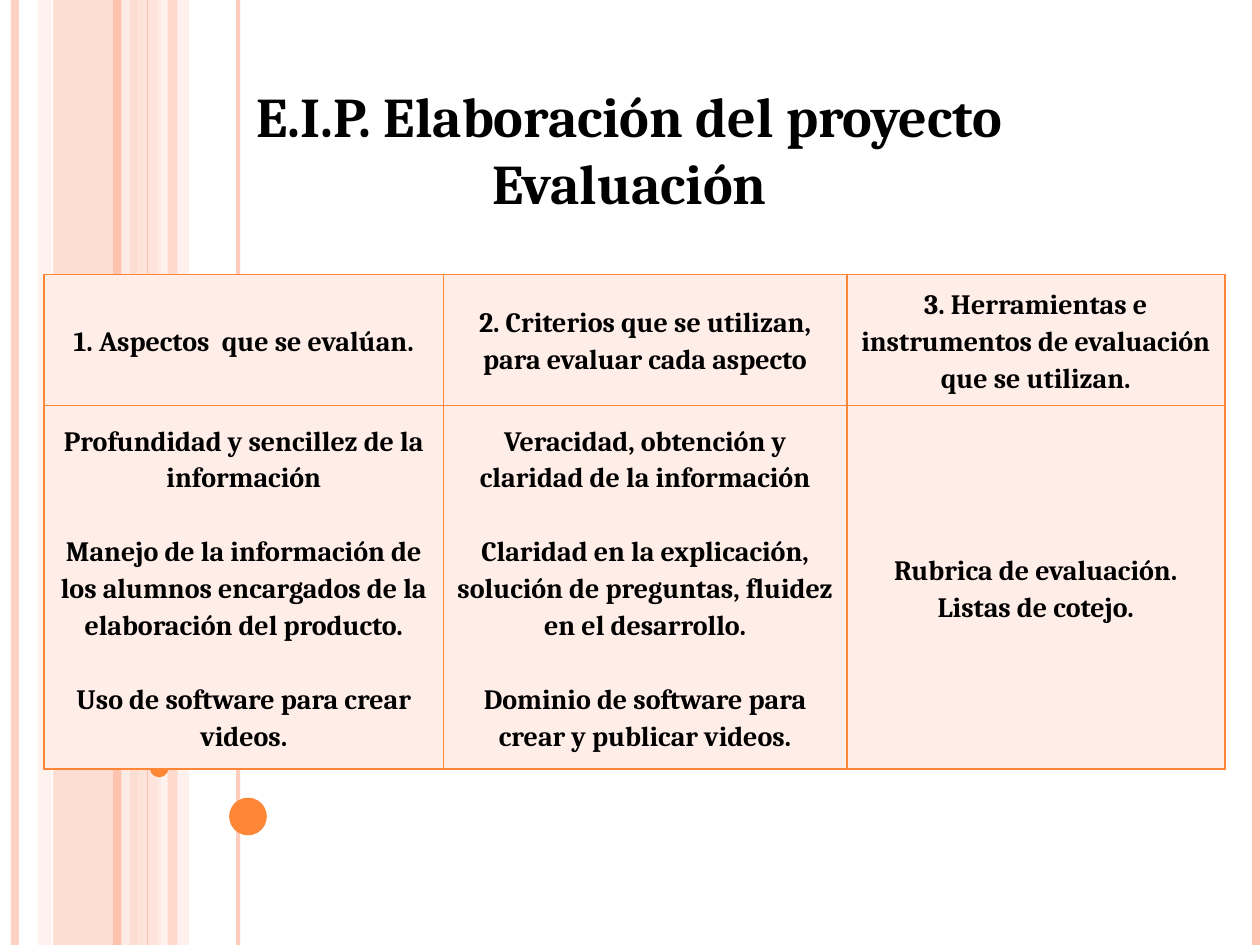
from pptx import Presentation
from pptx.dml.color import RGBColor
from pptx.enum.shapes import MSO_CONNECTOR, MSO_SHAPE
from pptx.enum.text import MSO_ANCHOR, PP_ALIGN
from pptx.oxml import parse_xml
from pptx.oxml.ns import nsdecls, qn
from pptx.util import Cm, Pt
from lxml import etree

FONT = "Cambria"
ORANGE, PEACH, ROSE, PALE = "FE8637", "FEC3AE", "FFD9CE", "FFEDE8"
WIDTH, HEIGHT = 25.4, 19.05

# Left, width, colour, opacity in percent
BANDS = [
    (1.07, 1.7, PEACH, 54),
    (0.76, 0.28, ROSE, 36),
    (2.74, 0.51, ROSE, 70),
    (3.18, 0.63, PALE, 71),
    (3.38, 0.2, PEACH, 51),
]
# Position, colour, points, opacity in percent
STRIPES = [
    (0.3, PEACH, 4.5, 73),
    (2.54, PALE, 4.5, 83),
    (2.36, PEACH, 4.5, 100),
    (4.8, PEACH, 2.25, 82),
    (2.97, PEACH, 0.75, 100),
    (25.32, PEACH, 4.5, 100),
]
# Left, top, diameter
DOTS = [(3.02, 15.29, 0.38), (4.62, 16.08, 0.76)]

TITLE = ["E.I.P. Elaboración del proyecto", "Evaluación"]
COLUMNS = [8.05, 8.13, 7.62]
ROWS = [2.64, 7.33]
CELLS = [
    [
        ["1. Aspectos  que se evalúan."],
        ["2. Criterios que se utilizan, para evaluar cada aspecto"],
        ["3. Herramientas e instrumentos de evaluación que se utilizan."],
    ],
    [
        ["Profundidad y sencillez de la información",
         "Manejo de la información de los alumnos encargados de la elaboración del producto.",
         "Uso de software para crear videos."],
        ["Veracidad, obtención y claridad de la información",
         "Claridad en la explicación, solución de preguntas, fluidez en el desarrollo.",
         "Dominio de software para crear y publicar videos."],
        ["Rubrica de evaluación.", "Listas de cotejo."],
    ],
]


def paint(color_format, color):
    color_format.rgb = RGBColor.from_string(color)


def fade(sp, opacity):
    """Make the first colour of a shape see-through."""
    color = next(sp._element.spPr.iter(qn("a:srgbClr")))
    etree.SubElement(color, qn("a:alpha")).set("val", str(opacity * 1000))


def write(tf, lines, size, spacing=1.0, gap=0):
    for i, line in enumerate(lines):
        p = tf.paragraphs[0] if i == 0 else tf.add_paragraph()
        p.alignment = PP_ALIGN.CENTER
        p.line_spacing = spacing
        p.space_before = Pt(gap if i else 0)
        r = p.add_run()
        r.text = line
        r.font.name, r.font.size, r.font.bold = FONT, Pt(size), True
        paint(r.font.color, "000000")


def add_solid(s, kind, x, y, w, h, color):
    sp = s.shapes.add_shape(kind, Cm(x), Cm(y), Cm(w), Cm(h))
    sp.shadow.inherit = False
    sp.fill.solid()
    paint(sp.fill.fore_color, color)
    sp.line.fill.background()
    return sp


def add_backdrop(s, x, y, h):
    # Vertical bands
    for left, w, color, opacity in BANDS:
        fade(add_solid(s, MSO_SHAPE.RECTANGLE, x + left, y, w, h, color), opacity)
    # Thin stripes
    for left, color, points, opacity in STRIPES:
        line = s.shapes.add_connector(
            MSO_CONNECTOR.STRAIGHT, Cm(x + left), Cm(y), Cm(x + left), Cm(y + h))
        line.line.width = Pt(points)
        paint(line.line.color, color)
        fade(line, opacity)
        etree.SubElement(line._element.spPr, qn("a:effectLst"))
    # Dots
    for left, top, d in DOTS:
        add_solid(s, MSO_SHAPE.OVAL, x + left, y + top, d, d, ORANGE)


def add_title(s, x, y, w, h):
    sp = s.shapes.title
    sp.left, sp.top, sp.width, sp.height = Cm(x), Cm(y), Cm(w), Cm(h)
    tf = sp.text_frame
    tf.word_wrap = True
    tf.vertical_anchor = MSO_ANCHOR.MIDDLE
    write(tf, TITLE, 32)


def add_borders(cell, color, points):
    tcPr = cell._tc.get_or_add_tcPr()
    for i, side in enumerate(("lnL", "lnR", "lnT", "lnB")):
        tcPr.insert(i, parse_xml(
            f'<a:{side} {nsdecls("a")} w="{Pt(points)}"><a:solidFill>'
            f'<a:srgbClr val="{color}"/></a:solidFill></a:{side}>'))


def add_evaluation_table(s, x, y):
    table = s.shapes.add_table(
        len(ROWS), len(COLUMNS), Cm(x), Cm(y), Cm(sum(COLUMNS)), Cm(sum(ROWS))).table
    for column, w in zip(table.columns, COLUMNS):
        column.width = Cm(w)
    for row, h, texts in zip(table.rows, ROWS, CELLS):
        row.height = Cm(h)
        for cell, lines in zip(row.cells, texts):
            cell.fill.solid()
            paint(cell.fill.fore_color, PALE)
            cell.vertical_anchor = MSO_ANCHOR.MIDDLE
            cell.margin_left = cell.margin_right = Cm(0.15)
            cell.margin_top = cell.margin_bottom = Cm(0.15)
            # Only the three-part lists are spaced apart
            write(cell.text_frame, lines, 16, 1.15, 21 if len(lines) > 2 else 0)
            add_borders(cell, ORANGE, 1)


def main():
    prs = Presentation()
    prs.slide_width, prs.slide_height = Cm(WIDTH), Cm(HEIGHT)
    s = prs.slides.add_slide(prs.slide_layouts[5])
    add_backdrop(s, 0, 0, HEIGHT)
    add_title(s, 2.69, 1.5, 20, 3)
    add_evaluation_table(s, 0.89, 5.53)
    prs.save("out.pptx")


if __name__ == "__main__":
    main()
